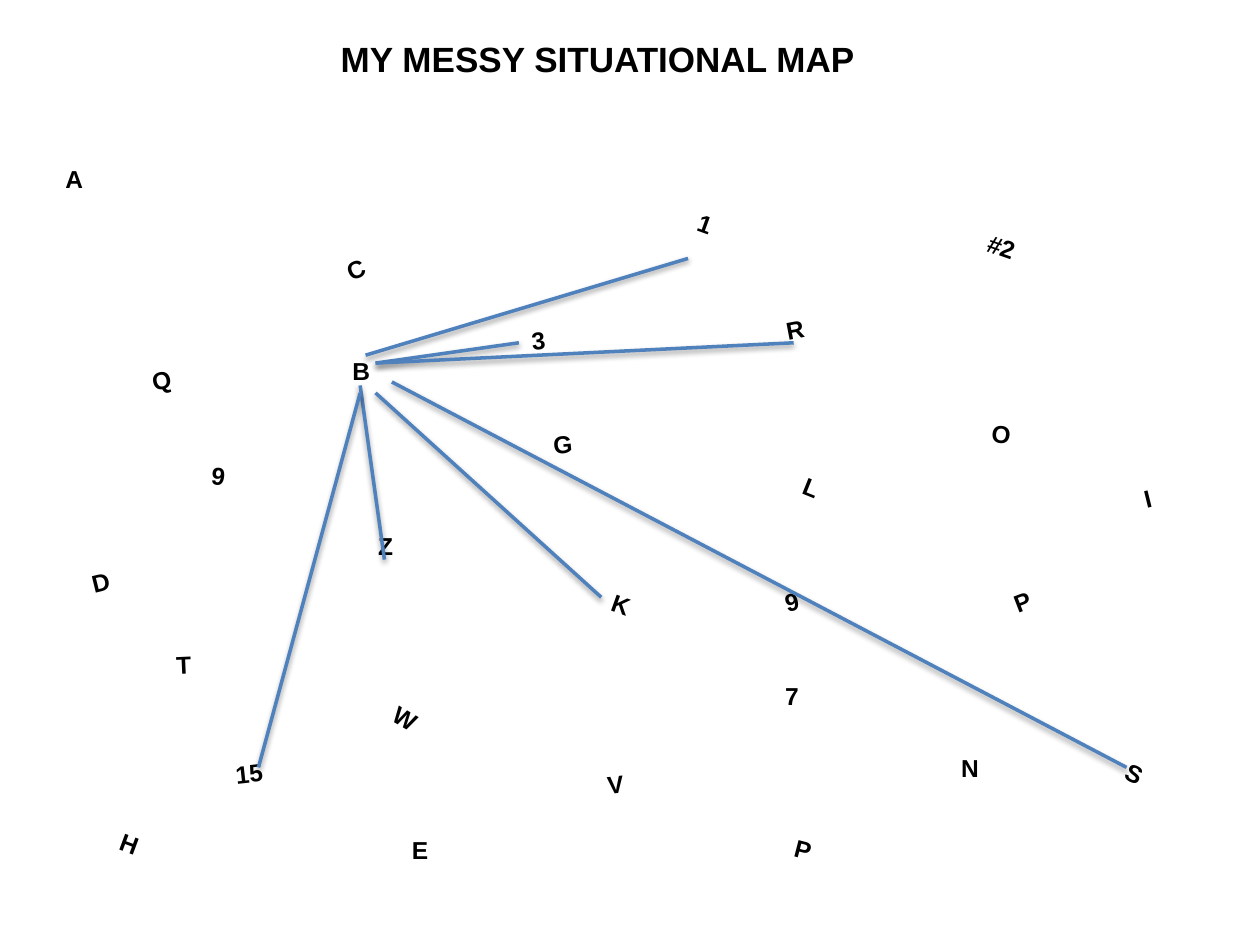
import dataclasses

import pptx
import pptx.dml.color
import pptx.enum.shapes
import pptx.enum.text
import pptx.util

Cm = pptx.util.Cm


@dataclasses.dataclass(frozen=True)
class Theme:
    font: str = "Arial"
    ink: str = "000000"
    link: str = "4F81BD"
    title_size: int = 20
    label_size: int = 14
    link_width: int = 2


THEME = Theme()
LABEL_HEIGHT = 0.86
WIDE_LABEL = 3

# text, left, top, width, rotation
LABELS = [
    ("A", 1.07, 3.18, 0.86, 0),
    ("C", 6.73, 5.0, 0.89, 336.8),
    ("1", 13.82, 4.09, 0.79, 20),
    (" #2", 19.53, 4.52, 1.19, 19.3),
    (" Q", 2.67, 7.26, 1.04, 346.9),
    ("3", 10.46, 6.43, 0.79, 353.7),
    ("R", 15.6, 6.22, 0.86, 349.1),
    ("O", 19.74, 8.33, 0.89, 5.6),
    ("9", 4.01, 9.17, 0.79, 6.3),
    ("G", 10.9, 8.53, 0.89, 354.7),
    ("L", 15.95, 9.4, 0.81, 21.9),
    ("I ", 22.81, 9.6, 0.79, 346.2),
    ("D", 1.6, 11.3, 0.86, 346.2),
    ("Z", 7.37, 10.59, 0.81, 0),
    ("K", 12.09, 11.76, 0.86, 19.7),
    ("P", 20.19, 11.71, 0.84, 338.9),
    ("T", 3.3, 12.98, 0.81, 357.5),
    ("W", 7.67, 14.05, 0.99, 30.5),
    ("7", 15.57, 13.61, 0.79, 0),
    ("9", 15.57, 11.71, 0.79, 346.6),
    ("S", 22.45, 15.16, 0.84, 25.8),
    ("H", 2.18, 16.59, 0.86, 20.4),
    ("E", 8.05, 16.71, 0.84, 0),
    ("P", 15.77, 16.69, 0.84, 14.5),
    ("V ", 10.24, 15.37, 4.47, 353.7),
    ("15", 2.79, 15.16, 4.47, 353.7),
    ("N", 17.83, 15.06, 3.45, 0),
    ("B", 5.56, 7.06, 3.45, 0),
]

# start x, start y, end x, end y
LINKS_FROM_B = [
    (7.57, 7.92, 12.12, 12.04),
    (7.57, 7.32, 10.46, 6.91),
    (7.37, 7.16, 13.87, 5.21),
    (7.57, 7.32, 16.0, 6.91),
    (7.26, 7.77, 7.75, 11.28),
    (7.26, 7.92, 5.21, 15.47),
    (7.9, 7.7, 22.71, 15.47),
]


def color(value):
    return pptx.dml.color.RGBColor.from_string(value)


def add_text(page, text, left, top, width, height, size, rotation=0):
    box = page.shapes.add_textbox(Cm(left), Cm(top), Cm(width), Cm(height))
    box.rotation = rotation
    box.text_frame.word_wrap = width > WIDE_LABEL
    para = box.text_frame.paragraphs[0]
    para.alignment = pptx.enum.text.PP_ALIGN.CENTER
    span = para.add_run()
    span.text = text
    span.font.name = THEME.font
    span.font.size = pptx.util.Pt(size)
    span.font.bold = True
    span.font.color.rgb = color(THEME.ink)


def add_link(page, *ends):
    link = page.shapes.add_connector(
        pptx.enum.shapes.MSO_CONNECTOR.STRAIGHT, *map(Cm, ends))
    link.line.color.rgb = color(THEME.link)
    link.line.width = pptx.util.Pt(THEME.link_width)


def main():
    deck = pptx.Presentation()
    deck.slide_width, deck.slide_height = Cm(25.4), Cm(19.05)
    page = deck.slides.add_slide(deck.slide_layouts[6])
    add_text(page, "MY MESSY SITUATIONAL MAP ", 1.88, 0.64, 20.52, 1.96,
             THEME.title_size)
    for text, left, top, width, rotation in LABELS:
        add_text(page, text, left, top, width, LABEL_HEIGHT,
                 THEME.label_size, rotation)
    for ends in LINKS_FROM_B:
        add_link(page, *ends)
    deck.save("out.pptx")


if __name__ == "__main__":
    main()
